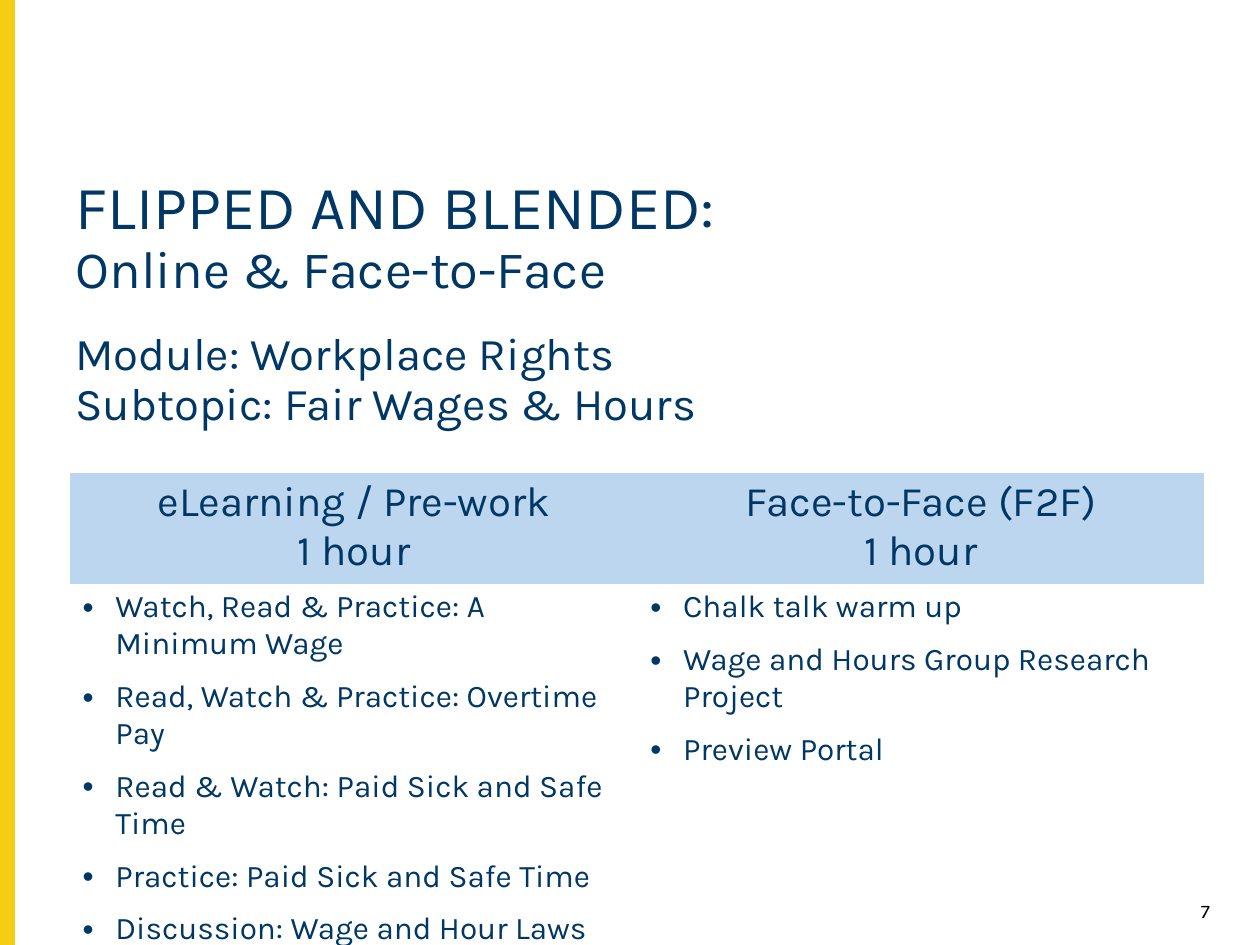
from lxml import etree
from pptx import Presentation
from pptx.dml.color import RGBColor
from pptx.enum.shapes import MSO_SHAPE as Shape
from pptx.enum.text import MSO_ANCHOR as Anchor, PP_ALIGN as Align
from pptx.oxml.ns import qn
from pptx.util import Pt

NAVY, YELLOW, SKY, BLACK = "003764", "F4CE12", "BBD6EE", "000000"
FONT = "Karla"
NO_STYLE = "{2D5ABB26-0587-4C30-8999-92F81FD0307C}"
HEADERS = [["eLearning / Pre-work", "1 hour"], ["Face-to-Face (F2F)", "1 hour"]]
ACTIVITIES = [
    [
        "Watch, Read & Practice: A Minimum Wage",
        "Read, Watch & Practice: Overtime Pay",
        "Read & Watch: Paid Sick and Safe Time",
        "Practice: Paid Sick and Safe Time",
        "Discussion: Wage and Hour Laws",
    ],
    ["Chalk talk warm up", "Wage and Hours Group Research Project", "Preview Portal"],
]


def color(value):
    """Turn a hex string into a colour."""
    return RGBColor.from_string(value)


def apply(target, values):
    """Set each attribute named in a dict of format values."""
    for name, value in values.items():
        setattr(target, name, value)


def add_bullet(paragraph):
    """Give a paragraph a hanging round bullet."""
    properties = paragraph._p.get_or_add_pPr()
    properties.set("marL", str(Pt(18.72)))
    properties.set("indent", str(-Pt(18.72)))
    bullet_color = etree.SubElement(properties, qn("a:buClr"))
    etree.SubElement(bullet_color, qn("a:srgbClr"), val=NAVY)
    etree.SubElement(properties, qn("a:buFont"), typeface="Arial")
    etree.SubElement(properties, qn("a:buChar"), char="•")


def write(frame, lines, sizes, layout, hue=NAVY, bulleted=False):
    """Fill a text frame with one formatted paragraph per line."""
    for index, (line, size) in enumerate(zip(lines, sizes)):
        paragraph = frame.add_paragraph() if index else frame.paragraphs[0]
        paragraph.text = line
        if bulleted:
            add_bullet(paragraph)
        apply(paragraph, {"space_before": Pt(9 if bulleted and index else 0), **layout})
        apply(paragraph.font, {"name": FONT, "size": Pt(size), "bold": False})
        paragraph.font.color.rgb = color(hue)


def add_bar(slide):
    """Draw the yellow bar along the left edge."""
    bar = slide.shapes.add_shape(Shape.RECTANGLE, 0, 0, Pt(8), Pt(540))
    bar.shadow.inherit = False
    bar.fill.solid()
    bar.fill.fore_color.rgb = color(YELLOW)
    bar.line.color.rgb = color(YELLOW)
    bar.line.width = Pt(1)


def place_title(slide, lines, sizes):
    """Move and fill the title placeholder."""
    title = slide.shapes.title
    apply(title, {"left": Pt(36), "top": Pt(97.5), "width": Pt(656.5), "height": Pt(89)})
    apply(title.text_frame, {"vertical_anchor": Anchor.TOP, "word_wrap": True})
    write(title.text_frame, lines, sizes, {"alignment": Align.LEFT, "line_spacing": 0.9})


def add_text(slide, box, lines, sizes, layout, hue=NAVY):
    """Add a wrapping text box."""
    frame = slide.shapes.add_textbox(*map(Pt, box)).text_frame
    frame.word_wrap = True
    write(frame, lines, sizes, layout, hue)


def add_plan(slide):
    """Add the two-column session table."""
    frame = slide.shapes.add_table(2, 2, Pt(40), Pt(270), Pt(648), Pt(195))
    table = frame.table
    apply(table, {"first_row": False, "horz_banding": False})
    table._tbl.tblPr.find(qn("a:tableStyleId")).text = NO_STYLE
    for column, width in zip(table.columns, (324.5, 323.5)):
        column.width = Pt(width)
    for row, height in zip(table.rows, (29.5, 165.5)):
        row.height = Pt(height)
    margins = {"margin_left": Pt(7.2), "margin_right": Pt(7.2),
               "margin_top": Pt(3), "margin_bottom": Pt(3)}
    for index, (header, activities) in enumerate(zip(HEADERS, ACTIVITIES)):
        head, body = table.cell(0, index), table.cell(1, index)
        for cell in (head, body):
            apply(cell, margins)
        head.fill.solid()
        head.fill.fore_color.rgb = color(SKY)
        body.fill.background()
        write(head.text_frame, header, [24] * len(header), {"alignment": Align.CENTER})
        write(body.text_frame, activities, [18] * len(activities),
              {"alignment": Align.LEFT}, bulleted=True)


def main():
    """Build and save the slide."""
    presentation = Presentation()
    apply(presentation, {"slide_width": Pt(720), "slide_height": Pt(540)})
    slide = presentation.slides.add_slide(presentation.slide_layouts[5])
    add_bar(slide)
    place_title(slide, ["FLIPPED AND BLENDED:", "Online & Face-to-Face"], [35, 30])
    add_text(slide, (36, 186, 656.5, 67),
             ["Module: Workplace Rights", "Subtopic: Fair Wages & Hours"], [26, 26],
             {"line_spacing": 0.9})
    add_plan(slide)
    add_text(slide, (661.5, 510.5, 37, 19), ["7"], [11], {"alignment": Align.RIGHT}, BLACK)
    presentation.save("out.pptx")


if __name__ == "__main__":
    main()
